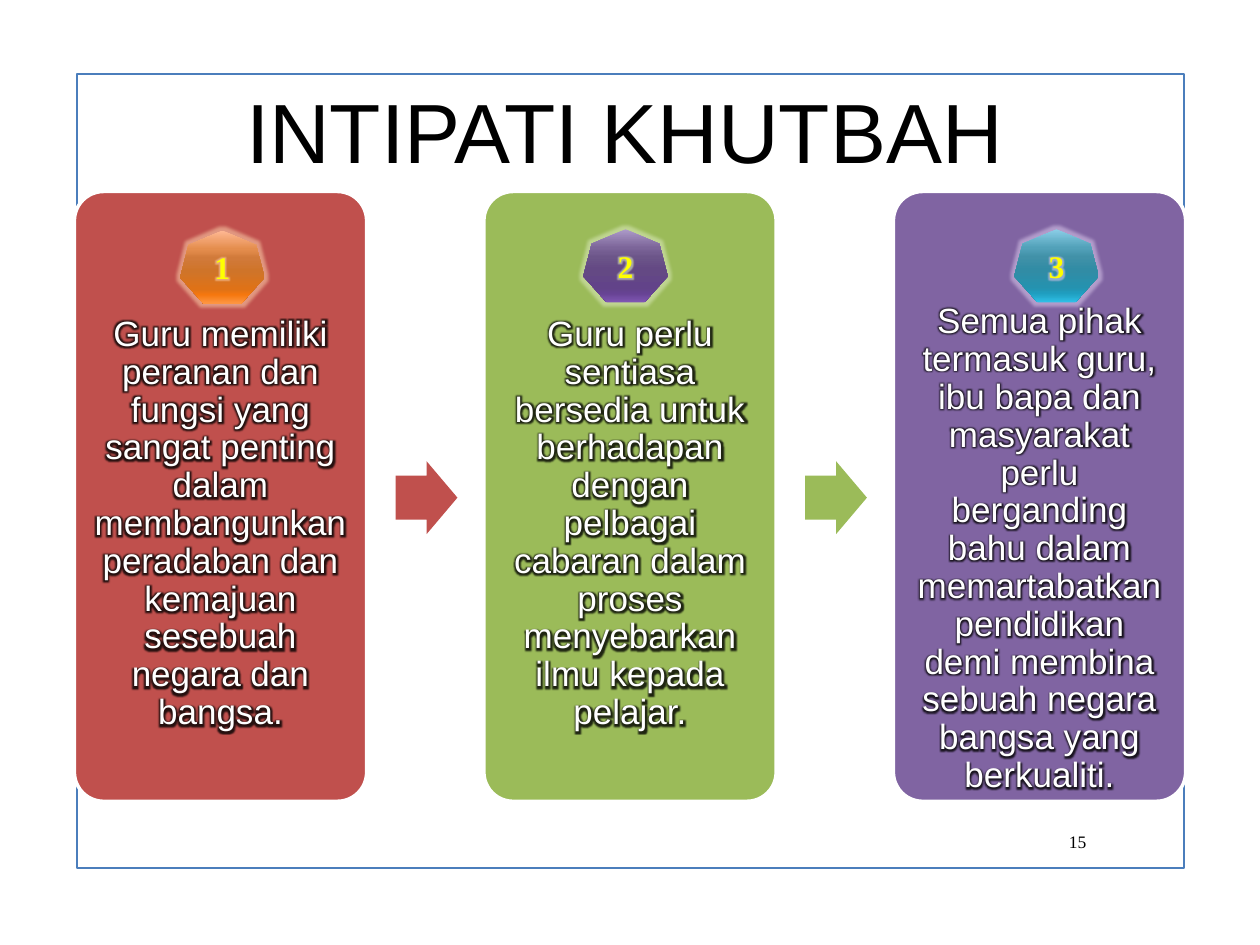
from lxml import etree
from pptx import Presentation
from pptx.dml.color import RGBColor
from pptx.enum import shapes, text
from pptx.oxml import ns
from pptx.util import Inches, Pt

CARD_WIDTH, CARD_HEIGHT, CARD_STEP = 2.32, 4.84, 3.25
CARD_LEFT, CARD_TOP = 0.59, 1.52
STOPS = (0, 25, 38, 55, 80, 88, 100)

# Card colour, message, gap above the message
CARDS = [
    ("C0504D", "Guru memiliki peranan dan fungsi yang sangat penting dalam "
     "membangunkan peradaban dan kemajuan sesebuah negara dan bangsa.", 0.92),
    ("9BBB59", "Guru perlu sentiasa bersedia untuk berhadapan dengan pelbagai "
     "cabaran dalam proses menyebarkan ilmu kepada pelajar.", 0.92),
    ("8064A2", "Semua pihak termasuk guru, ibu bapa dan masyarakat perlu "
     "berganding bahu dalam memartabatkan pendidikan demi membina sebuah "
     "negara bangsa yang berkualiti.", 0.82),
]

# Badge left, top, glow colour, gradient colours
BADGES = [
    (1.43, 1.83, "F9C9A5",
     "FFB893 E48D4D D17A3A CF7429 DF7217 F5770E FF9743"),
    (4.63, 1.82, "D9E8B8",
     "AD9BC9 7C6599 6C5589 644984 624389 674394 8057B4"),
    (8.05, 1.82, "D5C3E8",
     "8BCEE7 52A1B9 4191A8 318CA5 2592AF 1F9EC0 2FC0E7"),
]


def color(value):
    return RGBColor.from_string(value)


def add_child(parent, tag, **attributes):
    child = etree.SubElement(parent, ns.qn(tag))
    for name, value in attributes.items():
        child.set(name, str(value))
    return child


def add_glow(effects, value, radius, opacity):
    glow = add_child(effects, "a:glow", rad=int(Pt(radius)))
    glow_color = add_child(glow, "a:srgbClr", val=value)
    add_child(glow_color, "a:alpha", val=opacity * 1000)


def add_text_glow(run, value, radius, opacity):
    effects = etree.Element(ns.qn("a:effectLst"))
    add_glow(effects, value, radius, opacity)
    run.font.fill._xPr.find(ns.qn("a:solidFill")).addnext(effects)


def add_shape(slide, kind, box, fill=None, line=None, width=1):
    shape = slide.shapes.add_shape(kind, *map(Inches, box))
    shape.shadow.inherit = False
    if fill:
        shape.fill.solid()
        shape.fill.fore_color.rgb = color(fill)
    else:
        shape.fill.background()
    if line:
        shape.line.color.rgb = color(line)
        shape.line.width = Pt(width)
    else:
        shape.line.fill.background()
    return shape


def write(shape, words, size, font, value, align=text.PP_ALIGN.CENTER):
    paragraph = shape.text_frame.paragraphs[0]
    paragraph.text = words
    paragraph.alignment = align
    run = paragraph.runs[0]
    run.font.size = Pt(size)
    run.font.name = font
    run.font.color.rgb = color(value)
    return run


def add_label(slide, box, words, size, font, value, **options):
    label = slide.shapes.add_textbox(*map(Inches, box))
    label.text_frame.word_wrap = True
    return label, write(label, words, size, font, value, **options)


def add_card(slide, box, fill, message, gap):
    left, top, width, height = box
    card = add_shape(slide, shapes.MSO_SHAPE.ROUNDED_RECTANGLE, box,
                     fill, "FFFFFF", 2)
    card.adjustments[0] = 0.1
    inner = (left + 0.07, top + 0.07, width - 0.14, height - 0.14)
    label, run = add_label(slide, inner, message, 20, "Arial", "FFFFFF")
    frame = label.text_frame
    frame.margin_left = frame.margin_right = Inches(0.08)
    frame.margin_bottom = 0
    frame.margin_top = Inches(gap)
    frame.paragraphs[0].line_spacing = 0.9
    add_text_glow(run, "000000", 5, 80)


def add_arrow(slide, box, fill):
    arrow = add_shape(slide, shapes.MSO_SHAPE.RIGHT_ARROW, box, fill)
    arrow.adjustments[0] = 0.6
    arrow.adjustments[1] = 0.5


def add_badge(slide, box, number, glow, gradient):
    badge = add_shape(slide, shapes.MSO_SHAPE.HEPTAGON, box)
    # Seven-stop vertical gradient
    properties = badge.element.spPr
    fill = etree.Element(ns.qn("a:gradFill"))
    stops = add_child(fill, "a:gsLst")
    for position, value in zip(STOPS, gradient.split()):
        stop = add_child(stops, "a:gs", pos=position * 1000)
        add_child(stop, "a:srgbClr", val=value)
    add_child(fill, "a:lin", ang=90 * 60000, scaled=0)
    properties.replace(properties.find(ns.qn("a:noFill")), fill)
    add_glow(properties.find(ns.qn("a:effectLst")), glow, 4, 60)
    # Number
    frame = badge.text_frame
    frame.vertical_anchor = text.MSO_ANCHOR.MIDDLE
    frame.margin_left = frame.margin_right = 0
    run = write(badge, str(number), 18, "Times New Roman", "FFFF00")
    run.font.bold = True
    add_text_glow(run, glow, 5, 60)


def build_slide(presentation):
    slide = presentation.slides.add_slide(presentation.slide_layouts[6])
    # Frame and slide number
    add_shape(slide, shapes.MSO_SHAPE.RECTANGLE, (0.61, 0.59, 8.79, 6.3),
              line="4B7EBC", width=1.25)
    number, _ = add_label(slide, (8.29, 6.52, 0.43, 0.31), "15", 10,
                          "Times New Roman", "000000",
                          align=text.PP_ALIGN.RIGHT)
    number.text_frame.vertical_anchor = text.MSO_ANCHOR.MIDDLE
    # Cards, with an arrow after each but the last
    for index, (fill, message, gap) in enumerate(CARDS):
        left = CARD_LEFT + index * CARD_STEP
        add_card(slide, (left, CARD_TOP, CARD_WIDTH, CARD_HEIGHT),
                 fill, message, gap)
        if index < len(CARDS) - 1:
            add_arrow(slide, (left + 2.55, 3.66, 0.49, 0.58), fill)
    # Title
    title, _ = add_label(slide, (1.73, 0.58, 6.46, 0.91), "INTIPATI KHUTBAH",
                         48, "Arial", "000000")
    title.text_frame.word_wrap = False
    # Numbered badges
    for number, (left, top, glow, gradient) in enumerate(BADGES, 1):
        add_badge(slide, (left, top, 0.67, 0.58), number, glow, gradient)


def main():
    presentation = Presentation()
    presentation.slide_width = Inches(10)
    presentation.slide_height = Inches(7.5)
    build_slide(presentation)
    presentation.save("out.pptx")


if __name__ == "__main__":
    main()
